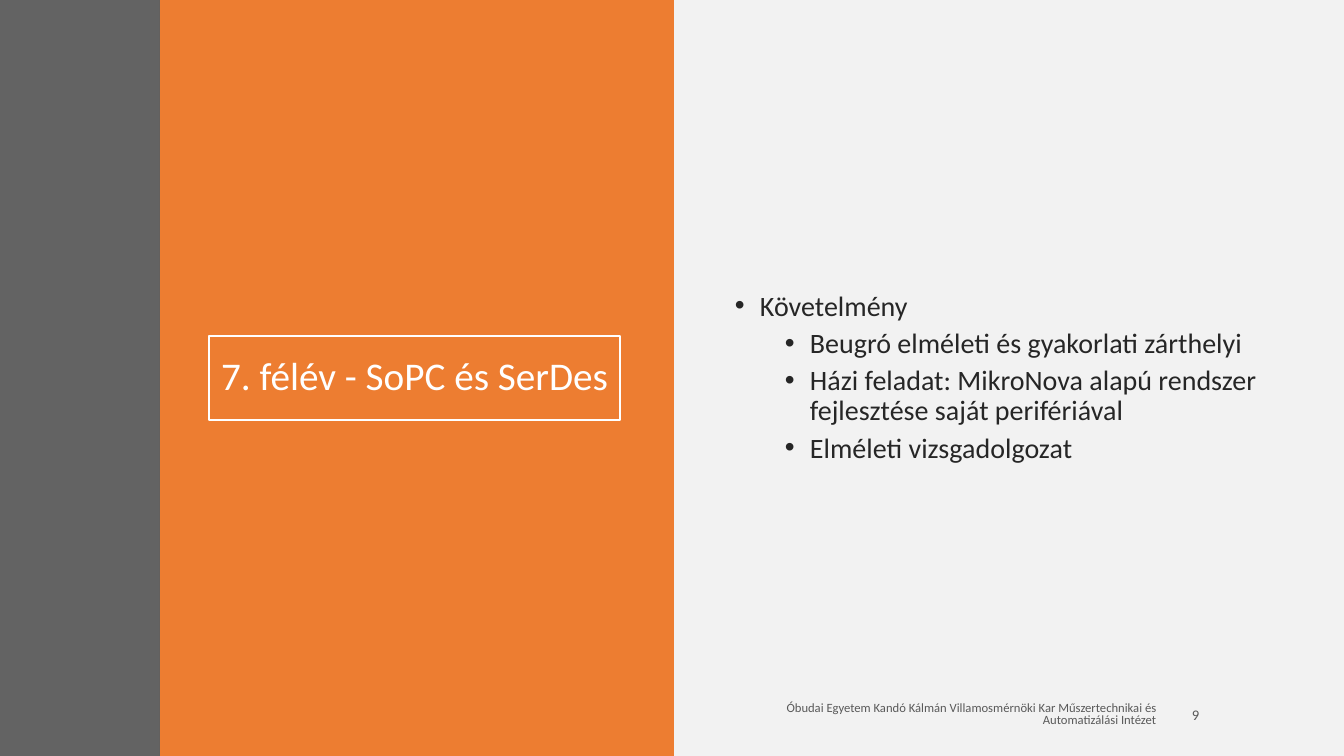
from lxml import etree
from pptx import Presentation
from pptx import util as u
from pptx.dml.color import RGBColor
from pptx.enum import shapes, text
from pptx.oxml.ns import qn

PX = 914400 / 100.8  # EMU in one px
WIDTH, HEIGHT = 1344, 756
FONT = "Calibri"
INSET = 10

REQUIREMENTS = [
    (0, "Követelmény"),
    (1, "Beugró elméleti és gyakorlati zárthelyi"),
    (1, "Házi feladat: MikroNova alapú rendszer fejlesztése saját perifériával"),
    (1, "Elméleti vizsgadolgozat"),
]
INSTITUTE = ("Óbudai Egyetem Kandó Kálmán Villamosmérnöki Kar "
             "Műszertechnikai és Automatizálási Intézet")


def px(length):
    return u.Emu(round(length * PX))


def color(value):
    return RGBColor.from_string(value)


def add_band(page, box, fill, opacity=100):
    band = page.shapes.add_shape(shapes.MSO_SHAPE.RECTANGLE, *map(px, box))
    band.shadow.inherit = False
    band.fill.solid()
    band.fill.fore_color.rgb = color(fill)
    band.line.fill.background()
    if opacity < 100:
        tint = band.fill._xPr.find(".//" + qn("a:srgbClr"))
        etree.SubElement(tint, qn("a:alpha"), val=str(opacity * 1000))


def prepare_frame(shape, inset=INSET):
    frame = shape.text_frame
    frame.word_wrap = True
    frame.auto_size = text.MSO_AUTO_SIZE.NONE
    frame.vertical_anchor = text.MSO_ANCHOR.MIDDLE
    frame.margin_left = frame.margin_right = px(inset)
    frame.margin_top = frame.margin_bottom = px(5)
    return frame


def format_para(para, size, ink, align=text.PP_ALIGN.LEFT, spacing=0.9):
    para.font.name = FONT
    para.font.size = u.Pt(size)
    para.font.color.rgb = color(ink)
    para.alignment = align
    para.line_spacing = spacing


def add_bullet(para, level):
    properties = para._p.get_or_add_pPr()
    properties.set("marL", str(px(25 + 50 * level)))
    properties.set("indent", str(px(-25)))
    bullet_font = etree.Element(qn("a:buFont"), typeface="Arial")
    bullet = etree.Element(qn("a:buChar"), char="•")
    defaults = properties.find(qn("a:defRPr"))
    defaults.addprevious(bullet_font)
    defaults.addprevious(bullet)


def place_title(page, box):
    title = page.shapes.title
    title.left, title.top, title.width, title.height = map(px, box)
    title.line.color.rgb = color("FFFFFF")
    title.line.width = u.Pt(2)
    frame = prepare_frame(title, inset=8)
    frame.text = "7. félév - SoPC és SerDes"
    format_para(frame.paragraphs[0], 28, "FFFFFF", text.PP_ALIGN.CENTER)


def add_requirements(page, box):
    frame = prepare_frame(page.shapes.add_textbox(*map(px, box)))
    for index, (level, wording) in enumerate(REQUIREMENTS):
        para = frame.add_paragraph() if index else frame.paragraphs[0]
        para.text = wording
        para.level = level
        format_para(para, 20, "262626")
        para.space_before = u.Pt(5 if level else 10)
        add_bullet(para, level)


def add_footer(page, box):
    left, top, width, height = box
    number_width, gap = 70, 16
    institute_width = width - number_width - gap
    parts = [
        (left, institute_width, INSTITUTE, 9, text.PP_ALIGN.RIGHT, 0.8),
        (left + institute_width + gap, number_width, "9", 10.5,
         text.PP_ALIGN.LEFT, 1.0),
    ]
    for x, part_width, wording, size, align, spacing in parts:
        part = page.shapes.add_textbox(*map(px, (x, top, part_width, height)))
        frame = prepare_frame(part)
        frame.text = wording
        format_para(frame.paragraphs[0], size, "595959", align, spacing)


def main():
    deck = Presentation()
    deck.slide_width, deck.slide_height = px(WIDTH), px(HEIGHT)
    page = deck.slides.add_slide(deck.slide_layouts[5])
    page.background.fill.solid()
    page.background.fill.fore_color.rgb = color("F2F2F2")

    # Left side: colour bands and framed title
    add_band(page, (160, 0, 514, HEIGHT), "ED7D31")
    add_band(page, (0, 0, 160, HEIGHT), "404040", opacity=80)
    title = page.shapes.title._element
    title.getparent().append(title)  # in front of the bands
    place_title(page, (209, 336, 411, 84))

    # Right side: requirements and footer
    add_requirements(page, (725, 123, 557, 510))
    add_footer(page, (716, 695, 536, 40))

    deck.save("out.pptx")


if __name__ == "__main__":
    main()
